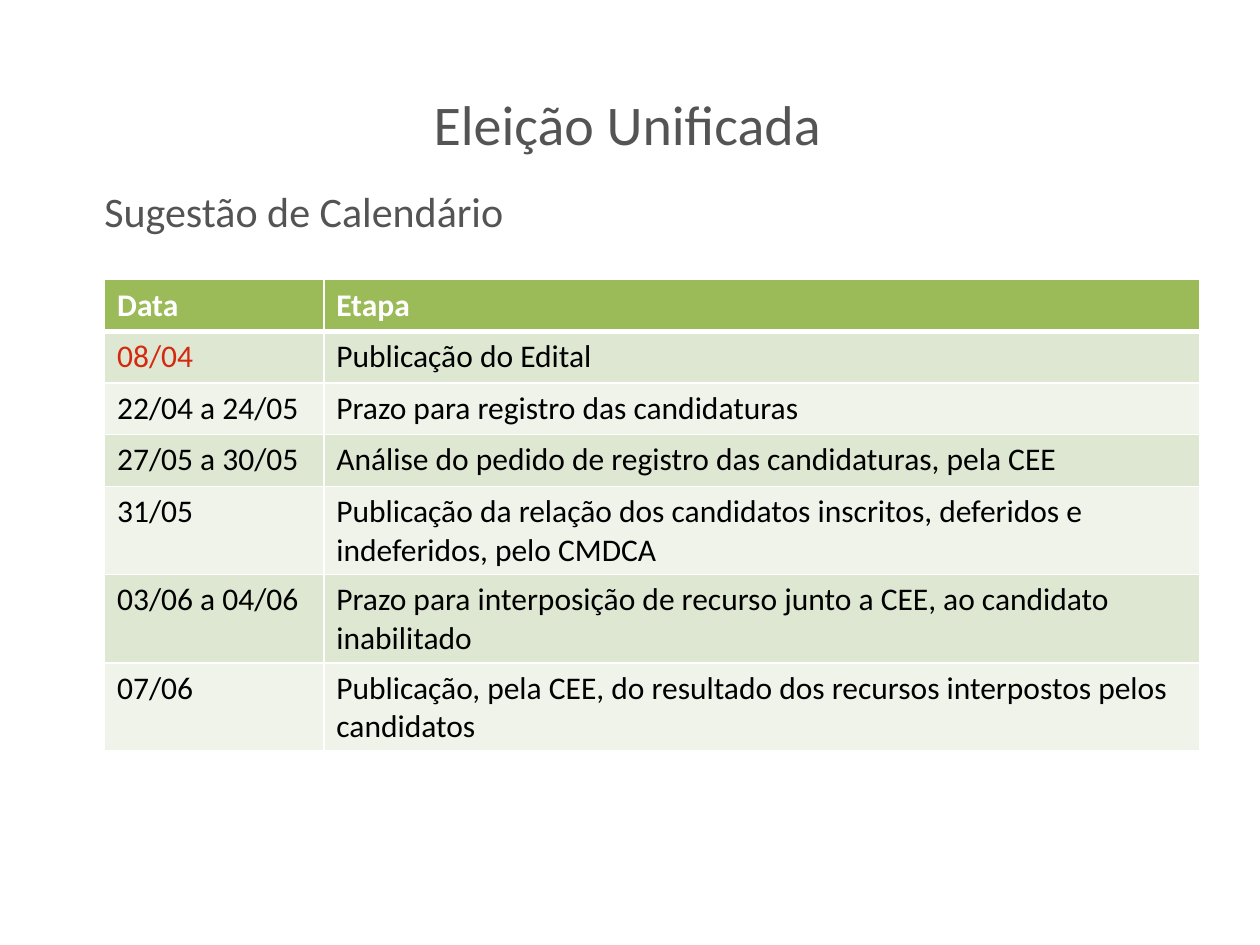
from lxml import etree
from pptx import Presentation
from pptx import util as u
from pptx.dml.color import RGBColor
from pptx.enum import text
from pptx.oxml.ns import qn

WIDTH, HEIGHT = u.Inches(10), u.Inches(7.5)
COLORS = {
    "heading": "545454",
    "header": "9BBB59",
    "odd": "DEE7D1",
    "even": "EFF3EA",
    "white": "FFFFFF",
    "black": "000000",
    "alert": "D42910",
}
CALENDAR = [
    ("Data", "Etapa"),
    ("08/04", "Publicação do Edital"),
    ("22/04 a 24/05", "Prazo para registro das candidaturas"),
    ("27/05 a 30/05", "Análise do pedido de registro das candidaturas, pela CEE"),
    ("31/05", "Publicação da relação dos candidatos inscritos, deferidos e indeferidos, pelo CMDCA"),
    ("03/06 a 04/06", "Prazo para interposição de recurso junto a CEE, ao candidato inabilitado"),
    ("07/06", "Publicação, pela CEE, do resultado dos recursos interpostos pelos candidatos"),
]


def color(name):
    return RGBColor.from_string(COLORS[name])


def write(frame, words, color_name, **font_format):
    para = frame.paragraphs[0]
    span = para.add_run()
    span.text = words
    for name, value in {"name": "Calibri", **font_format}.items():
        setattr(span.font, name, value)
    span.font.color.rgb = color(color_name)
    return para


def add_text(page, area, words, size, align, anchor):
    left, top, width, height = area
    box = page.shapes.add_textbox(
        int(WIDTH * left), int(HEIGHT * top), int(WIDTH * width), int(HEIGHT * height)
    )
    frame = box.text_frame
    for name, value in {"word_wrap": True, "vertical_anchor": anchor}.items():
        setattr(frame, name, value)
    write(frame, words, "heading", size=u.Pt(size)).alignment = align


def add_borders(cell, widths):
    properties = cell._tc.get_or_add_tcPr()
    for index, (side, width) in enumerate(widths.items()):
        line = etree.Element(qn(f"a:ln{side}"), w=str(u.Pt(width)))
        fill = etree.SubElement(line, qn("a:solidFill"))
        etree.SubElement(fill, qn("a:srgbClr"), val=COLORS["white"])
        properties.insert(index, line)


def fill_cell(cell, words, row, column):
    header = row == 0
    band = "header" if header else "odd" if row % 2 else "even"
    ink = "white" if header else "alert" if (row, column) == (1, 0) else "black"
    cell.fill.solid()
    cell.fill.fore_color.rgb = color(band)
    add_borders(cell, {"L": 1, "R": 1, "T": 3 if row == 1 else 1, "B": 3 if header else 1})
    write(cell.text_frame, words, ink, size=u.Pt(18), bold=header)


def add_calendar(page):
    columns = [u.Inches(1.74), u.Inches(6.95)]
    row_height = u.Inches(0.41)
    table = page.shapes.add_table(
        len(CALENDAR), len(columns), u.Inches(0.83), u.Inches(2.22),
        sum(columns), row_height * len(CALENDAR),
    ).table
    for column, width in zip(table.columns, columns):
        column.width = width
    for row, entries in enumerate(CALENDAR):
        for column, words in enumerate(entries):
            fill_cell(table.cell(row, column), words, row, column)


def main():
    deck = Presentation()
    deck.slide_width, deck.slide_height = WIDTH, HEIGHT
    page = deck.slides.add_slide(deck.slide_layouts[6])
    add_text(page, (0.083, 0.07, 0.83, 0.12), "Eleição Unificada", 32,
             text.PP_ALIGN.CENTER, text.MSO_ANCHOR.MIDDLE)
    add_text(page, (0.073, 0.19, 0.87, 0.61), "Sugestão de Calendário", 24,
             text.PP_ALIGN.LEFT, text.MSO_ANCHOR.TOP)
    add_calendar(page)
    deck.save("out.pptx")


if __name__ == "__main__":
    main()
